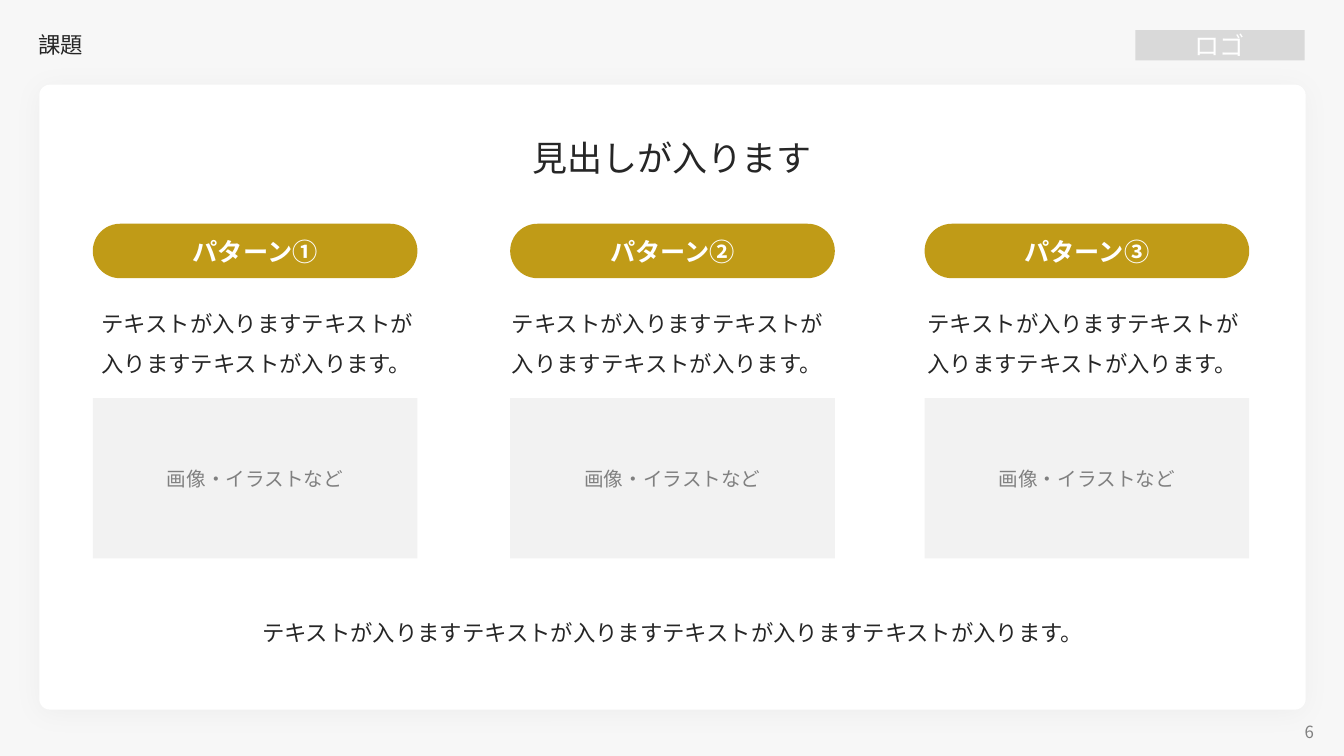
from lxml import etree
from pptx import Presentation, util as u
from pptx.dml.color import RGBColor
from pptx.enum import shapes, text
from pptx.oxml import parse_xml
from pptx.oxml.ns import nsdecls, qn

COLORS = {"page": "F7F7F7", "white": "FFFFFF", "logo": "D9D9D9", "gold": "C09B17",
          "image": "F2F2F2", "ink": "262626", "gray": "808080"}
FONT = "Noto Sans CJK JP"
SHAPE = shapes.MSO_SHAPE
ALIGN = text.PP_ALIGN
MIDDLE, TOP = text.MSO_ANCHOR.MIDDLE, text.MSO_ANCHOR.TOP
SENTENCE = "テキストが入ります"

deck = Presentation()
deck.slide_width, deck.slide_height = u.Inches(13.33), u.Inches(7.5)
page = deck.slides.add_slide(deck.slide_layouts[5])
page.background.fill.solid()
page.background.fill.fore_color.rgb = RGBColor.from_string(COLORS["page"])


def write(box, words, size, color, align=ALIGN.CENTER, anchor=MIDDLE,
          spacing=1.0, bold=False, font=FONT):
    """Put one formatted paragraph into a shape, text box or placeholder."""
    frame = box.text_frame
    frame.text = words
    frame.word_wrap, frame.vertical_anchor = True, anchor
    frame.auto_size = text.MSO_AUTO_SIZE.NONE
    para = frame.paragraphs[0]
    para.alignment, para.line_spacing = align, spacing
    span = para.runs[0]
    for name, value in {"size": u.Pt(size), "bold": bold, "name": font}.items():
        setattr(span.font, name, value)
    span.font.color.rgb = RGBColor.from_string(COLORS[color])
    east_asian = etree.SubElement(span.font._element, qn("a:ea"))
    east_asian.set("typeface", font)


def add_box(place, fill=None, kind=SHAPE.RECTANGLE, rounding=None):
    """Add a text box, or a flat filled shape when a fill is given."""
    place = [u.Inches(value) for value in place]
    if fill is None:
        return page.shapes.add_textbox(*place)
    box = page.shapes.add_shape(kind, *place)
    box.shadow.inherit = False
    box.fill.solid()
    box.fill.fore_color.rgb = RGBColor.from_string(COLORS[fill])
    box.line.fill.background()
    if rounding is not None:
        box.adjustments[0] = rounding
    return box


# Frame of the page
title = page.shapes.title
for side, value in {"left": 0.28, "top": 0.25, "width": 10, "height": 0.41}.items():
    setattr(title, side, u.Inches(value))
write(title, "課題", 16, "ink", ALIGN.LEFT, spacing=0.9)

card = add_box((0.39, 0.84, 12.56, 6.2), "white", SHAPE.ROUNDED_RECTANGLE, 0.017)
effects = card._element.spPr.find(qn("a:effectLst"))
effects.append(parse_xml(
    f'<a:outerShdw {nsdecls("a")} blurRad="{u.Pt(20)}" dist="{u.Pt(3)}" dir="5400000" '
    'algn="t" rotWithShape="0"><a:srgbClr val="000000"><a:alpha val="3000"/>'
    '</a:srgbClr></a:outerShdw>'))

write(add_box((10.02, 7.14, 3.11, 0.24)), "6", 12, "gray", ALIGN.RIGHT)
write(add_box((11.26, 0.3, 1.68, 0.3), "logo"), "ロゴ", 18, "white")

# Heading and three patterns
write(add_box((1.19, 1.3, 10.95, 0.52)), "見出しが入ります", 25, "ink", anchor=TOP)

columns = [("①", 0.92, 0.91), ("②", 5.06, 4.98), ("③", 9.17, 9.1)]
for number, left, text_left in columns:
    pill = add_box((left, 2.22, 3.22, 0.54), "gold", SHAPE.ROUNDED_RECTANGLE, 0.5)
    write(pill, "パターン" + number, 18, "white", bold=True)
    write(add_box((text_left, 2.89, 3.37, 0.88)), SENTENCE * 3 + "。", 16, "ink",
          ALIGN.LEFT, TOP, 1.5)
    write(add_box((left, 3.95, 3.22, 1.59), "image"), "画像・イラストなど", 14, "gray",
          font="Roboto")

# Summary
write(add_box((1.9, 5.96, 9.55, 0.45)), SENTENCE * 4 + "。", 16, "ink",
      anchor=TOP, spacing=1.5)

deck.save("out.pptx")
